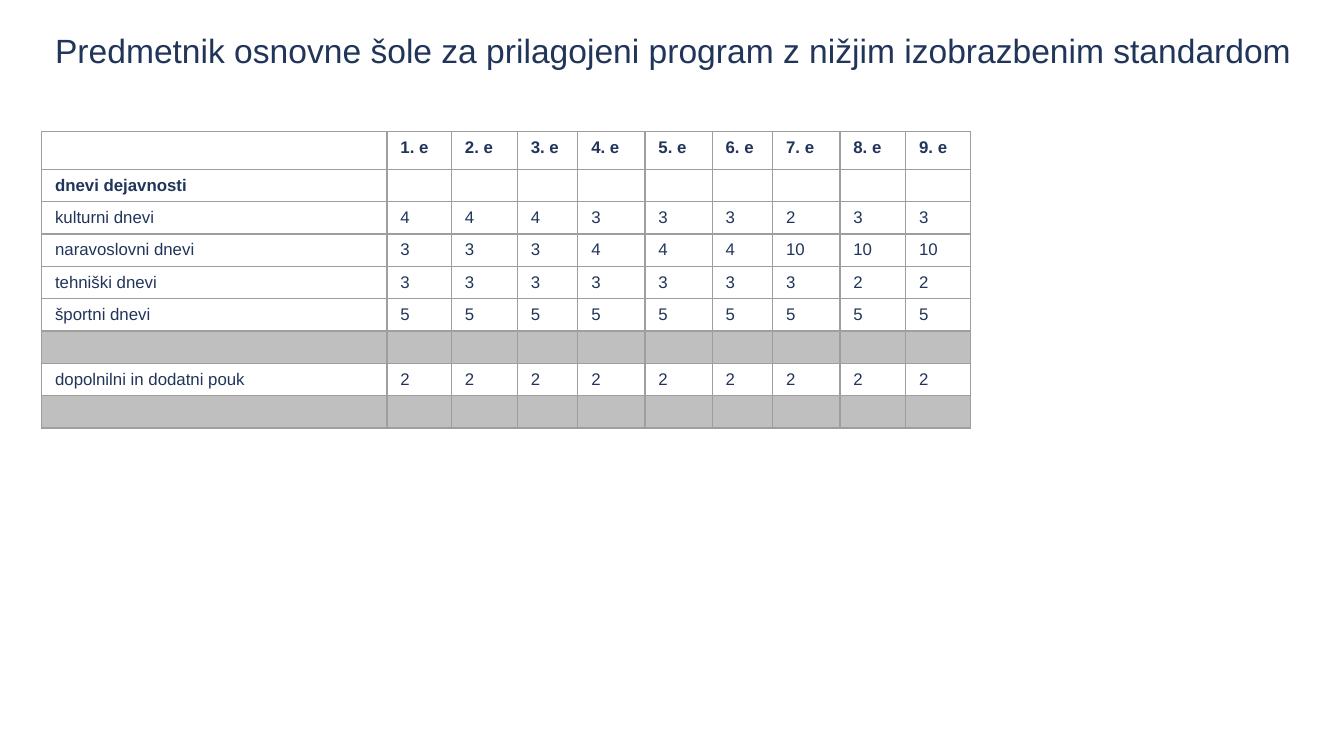
from dataclasses import dataclass

from lxml.etree import SubElement
from pptx import Presentation
from pptx.dml.color import RGBColor as RGB
from pptx.enum.text import MSO_ANCHOR as Anchor, MSO_AUTO_SIZE as AutoSize, PP_ALIGN as Align
from pptx.oxml.ns import qn
from pptx.util import Inches, Pt


@dataclass(frozen=True)
class Theme:
    font: str = "Arial"
    text: str = "21355A"
    border: str = "9E9E9E"
    paper: str = "FFFFFF"
    divider: str = "BFBFBF"
    title_size: float = 18
    table_size: float = 9
    border_width: float = 0.75


@dataclass(frozen=True)
class Row:
    label: str = ""
    values: tuple = ("",) * 9
    bold: bool = False
    fill: str = Theme.paper
    height: float = 0.24


THEME = Theme()
DIVIDER = Row(fill=THEME.divider)
COLUMN_WIDTHS = (2.57, 0.48, 0.49, 0.45, 0.5, 0.5, 0.45, 0.5, 0.49, 0.48)
ROWS = (
    Row(values=tuple(f"{grade}. e" for grade in range(1, 10)), bold=True, height=0.28),
    Row("dnevi dejavnosti", bold=True),
    Row("kulturni dnevi", (4, 4, 4, 3, 3, 3, 2, 3, 3)),
    Row("naravoslovni dnevi", (3, 3, 3, 4, 4, 4, 10, 10, 10)),
    Row("tehniški dnevi", (3, 3, 3, 3, 3, 3, 3, 2, 2)),
    Row("športni dnevi", (5,) * 9),
    DIVIDER,
    Row("dopolnilni in dodatni pouk", (2,) * 9),
    DIVIDER,
)


def write_text(tf, text: str, *, size: float, bold: bool = False) -> None:
    """Write one left-aligned paragraph; an empty one still keeps its font and size."""
    p = tf.paragraphs[0]
    p.alignment = Align.LEFT
    if not text:
        end = SubElement(p._p, qn("a:endParaRPr"), sz=str(int(size * 100)))
        SubElement(end, qn("a:latin"), typeface=THEME.font)
        return
    r = p.add_run()
    r.text = text
    r.font.name = THEME.font
    r.font.size = Pt(size)
    r.font.bold = bold
    r.font.color.rgb = RGB.from_string(THEME.text)


def format_cell(cell, fill: str) -> None:
    """Border all four sides, then fill the cell."""
    tc_pr = cell._tc.get_or_add_tcPr()
    for side in ("lnL", "lnR", "lnT", "lnB"):
        ln = SubElement(tc_pr, qn(f"a:{side}"), w=str(Pt(THEME.border_width)))
        solid = SubElement(ln, qn("a:solidFill"))
        SubElement(solid, qn("a:srgbClr"), val=THEME.border)
    cell.fill.solid()
    cell.fill.fore_color.rgb = RGB.from_string(fill)


def add_title(s, text: str) -> None:
    sp = s.shapes.title
    sp.left, sp.top, sp.width, sp.height = map(Inches, (0.31, 0.17, 9.94, 0.5))
    tf = sp.text_frame
    tf.word_wrap = True
    tf.auto_size = AutoSize.NONE
    tf.vertical_anchor = Anchor.TOP
    write_text(tf, text, size=THEME.title_size)


def add_timetable(s, rows: tuple[Row, ...], widths: tuple[float, ...]) -> None:
    height = sum(row.height for row in rows)
    table = s.shapes.add_table(
        len(rows), len(widths),
        Inches(0.31), Inches(0.98), Inches(sum(widths)), Inches(height),
    ).table
    table.first_row = table.horz_banding = False
    for column, width in zip(table.columns, widths):
        column.width = Inches(width)
    for line, row in zip(table.rows, rows):
        line.height = Inches(row.height)
        for cell, value in zip(line.cells, (row.label, *row.values)):
            write_text(cell.text_frame, str(value), size=THEME.table_size, bold=row.bold)
            format_cell(cell, row.fill)


def main() -> None:
    prs = Presentation()
    prs.slide_width = Inches(10)
    prs.slide_height = prs.slide_width * 9 // 16  # widescreen
    s = prs.slides.add_slide(prs.slide_layouts[5])  # title only

    # Days of activities and extra lessons by grade
    add_timetable(s, ROWS, COLUMN_WIDTHS)

    # Heading
    add_title(s, "Predmetnik osnovne šole za prilagojeni program z nižjim izobrazbenim standardom")

    prs.save("out.pptx")


if __name__ == "__main__":
    main()
